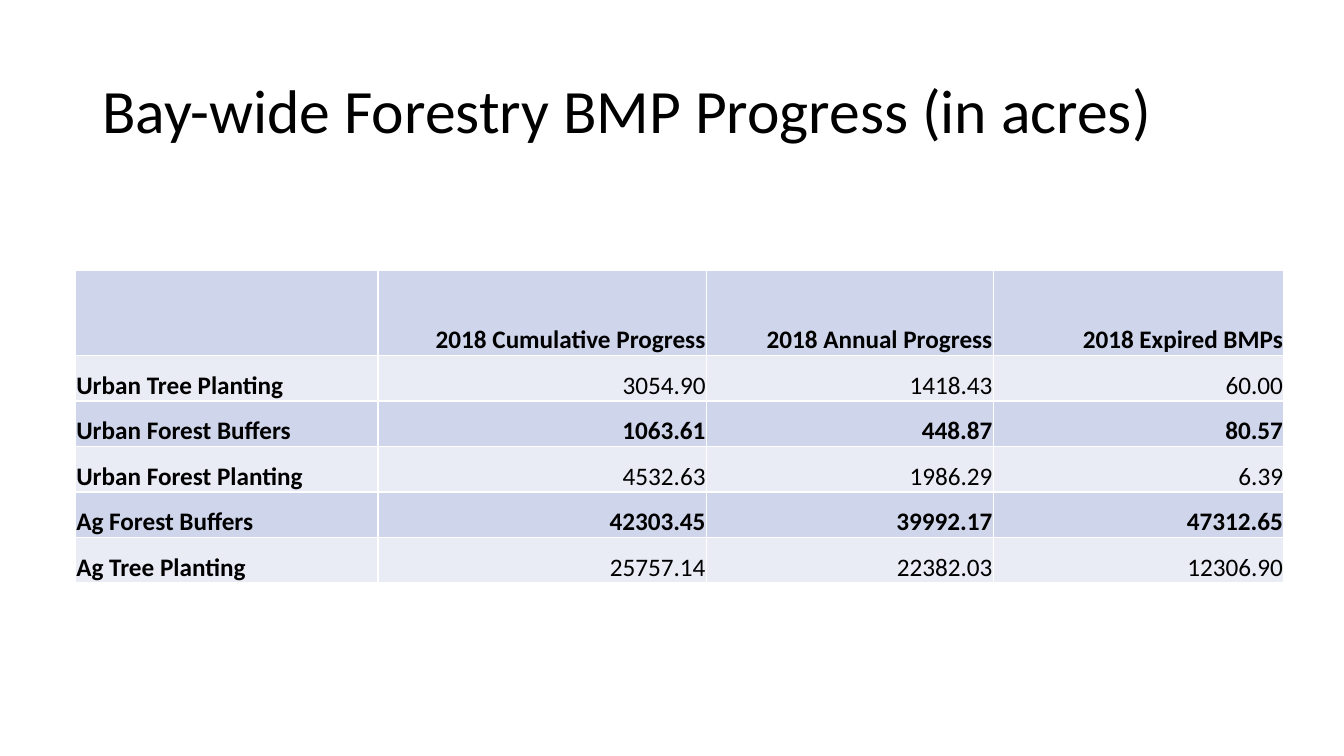
from dataclasses import dataclass

from lxml import etree
from pptx import Presentation
from pptx.dml.color import RGBColor
from pptx.enum.text import MSO_ANCHOR, PP_ALIGN
from pptx.oxml.ns import qn
from pptx.util import Pt

MIDDLE, BOTTOM = MSO_ANCHOR.MIDDLE, MSO_ANCHOR.BOTTOM
LEFT, RIGHT = PP_ALIGN.LEFT, PP_ALIGN.RIGHT

TITLE = "Bay-wide Forestry BMP Progress (in acres)"
HEADER = ("", "2018 Cumulative Progress", "2018 Annual Progress", "2018 Expired BMPs")
PROGRESS = [
    ("Urban Tree Planting", "3054.90", "1418.43", "60.00"),
    ("Urban Forest Buffers", "1063.61", "448.87", "80.57"),
    ("Urban Forest Planting", "4532.63", "1986.29", "6.39"),
    ("Ag Forest Buffers", "42303.45", "39992.17", "47312.65"),
    ("Ag Tree Planting", "25757.14", "22382.03", "12306.90"),
]

PX = 6350  # EMU per px, 144 px to the inch
SLIDE_SIZE = (1920, 1080)
TITLE_BOX = (132, 58, 1656, 209)
TABLE_ORIGIN = (108, 387)
COLUMN_WIDTHS = (432, 469, 410, 415)
HEADER_HEIGHT, ROW_HEIGHT = 121, 65
CELL_FORMAT = {
    "margin_left": PX,
    "margin_right": PX,
    "margin_top": PX,
    "margin_bottom": 0,
    "vertical_anchor": BOTTOM,
}


@dataclass(frozen=True)
class Theme:
    font: str = "Calibri"
    text: str = "000000"
    bands: tuple = ("CFD5EA", "E9EBF5")
    border: str = "FFFFFF"
    border_width: int = 1
    title_size: int = 44
    table_size: int = 18


THEME = Theme()


def apply(target, values):
    for name, value in values.items():
        setattr(target, name, value)


def write(frame, text, size, bold=False, align=LEFT):
    para = frame.paragraphs[0]
    para.alignment = align
    span = para.add_run()
    span.text = text
    apply(span.font, {"name": THEME.font, "size": Pt(size), "bold": bold})
    span.font.color.rgb = RGBColor.from_string(THEME.text)
    return para


def add_borders(cell):
    """Put the four lines ahead of the fill, as the schema requires."""
    properties = cell._tc.get_or_add_tcPr()
    for position, side in enumerate(("lnL", "lnR", "lnT", "lnB")):
        line = etree.Element(qn(f"a:{side}"), w=str(Pt(THEME.border_width)))
        fill = etree.SubElement(line, qn("a:solidFill"))
        etree.SubElement(fill, qn("a:srgbClr"), val=THEME.border)
        properties.insert(position, line)


def add_title(page):
    box = page.shapes.add_textbox(*(length * PX for length in TITLE_BOX))
    apply(box.text_frame, {"word_wrap": True, "vertical_anchor": MIDDLE})
    write(box.text_frame, TITLE, THEME.title_size).line_spacing = 0.9


def add_progress_table(page):
    rows = [HEADER, *PROGRESS]
    heights = [HEADER_HEIGHT] + [ROW_HEIGHT] * len(PROGRESS)
    frame = (*TABLE_ORIGIN, sum(COLUMN_WIDTHS), sum(heights))
    table = page.shapes.add_table(
        len(rows), len(HEADER), *(length * PX for length in frame)
    ).table
    apply(table, {"first_row": False, "horz_banding": False})
    for column, width in zip(table.columns, COLUMN_WIDTHS):
        column.width = width * PX
    for r, (values, height) in enumerate(zip(rows, heights)):
        table.rows[r].height = height * PX
        band = r % 2
        for c, value in enumerate(values):
            cell = table.cell(r, c)
            apply(cell, CELL_FORMAT)
            cell.fill.solid()
            cell.fill.fore_color.rgb = RGBColor.from_string(THEME.bands[band])
            add_borders(cell)
            if value:
                bold = c == 0 or band == 0
                align = RIGHT if c else LEFT
                write(cell.text_frame, value, THEME.table_size, bold, align)


def main():
    deck = Presentation()
    deck.slide_width, deck.slide_height = (length * PX for length in SLIDE_SIZE)
    page = deck.slides.add_slide(deck.slide_layouts[6])
    add_title(page)
    add_progress_table(page)
    deck.save("out.pptx")


if __name__ == "__main__":
    main()
